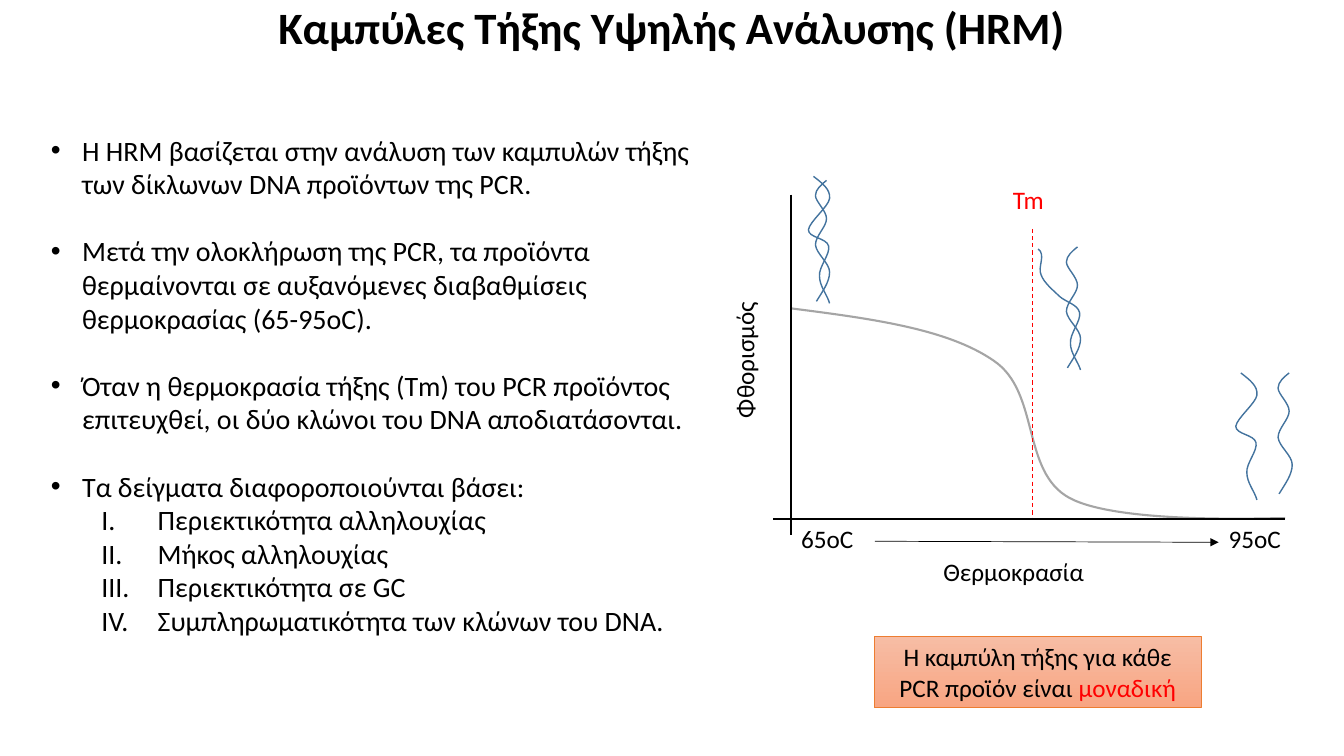
from lxml.etree import SubElement
from pptx import Presentation
from pptx.dml.color import RGBColor
from pptx.enum.shapes import MSO_CONNECTOR as Connector, MSO_SHAPE as Shape
from pptx.enum.text import MSO_ANCHOR as Anchor, MSO_AUTO_SIZE as AutoSize, PP_ALIGN as Align
from pptx.oxml.ns import qn
from pptx.util import Emu, Inches, Pt

COLUMNS, ROWS = 40, 30
BLACK, RED, GREY, BLUE = "000000", "FF0000", "A5A5A5", "43739E"


def colour(value):
    return RGBColor.from_string(value)


class SlideMaker:
    font = "Calibri"

    def __init__(self, deck):
        self.cell_w = deck.slide_width / COLUMNS
        self.cell_h = deck.slide_height / ROWS
        self.slide = deck.slides.add_slide(deck.slide_layouts[5])
        self.shapes = self.slide.shapes

    def place(self, *lengths):
        """Turn alternating columns and rows into lengths."""
        return [Emu(round(length * (self.cell_h if i % 2 else self.cell_w)))
                for i, length in enumerate(lengths)]

    def style(self, paragraph, size, ink=BLACK, bold=False):
        for run in paragraph.runs:
            run.font.name, run.font.size, run.font.bold = self.font, Pt(size), bold
            run.font.color.rgb = colour(ink)

    def title(self, wording, *area):
        heading = self.shapes.title
        heading.left, heading.top, heading.width, heading.height = self.place(*area)
        frame = heading.text_frame
        frame.text = wording
        frame.auto_size, frame.vertical_anchor = AutoSize.NONE, Anchor.MIDDLE
        frame.paragraphs[0].alignment = Align.CENTER
        frame.paragraphs[0].line_spacing = 0.9
        self.style(frame.paragraphs[0], 32, bold=True)

    def label(self, wording, *area, ink=BLACK, rotation=0):
        box = self.shapes.add_textbox(*self.place(*area))
        box.rotation = rotation
        frame = box.text_frame
        frame.text = wording
        frame.word_wrap, frame.auto_size = False, AutoSize.SHAPE_TO_FIT_TEXT
        self.style(frame.paragraphs[0], 18, ink)

    def outline(self, points, reasons, *area):
        frame = self.shapes.add_textbox(*self.place(*area)).text_frame
        frame.word_wrap = True
        frame.text = "\n".join(points + reasons)
        for i, paragraph in enumerate(frame.paragraphs):
            is_point = i < len(points)
            paragraph.level = 0 if is_point else 1
            paragraph.space_before = Pt(24 if is_point and i else 0)
            self.style(paragraph, 20)
            margin, hang = (0.31, 0.31) if is_point else (1.06, 0.56)
            props = paragraph._p.get_or_add_pPr()
            props.set("marL", str(Inches(margin)))
            props.set("indent", str(-Inches(hang)))
            if is_point:
                SubElement(props, qn("a:buFont"), typeface="Arial")
                SubElement(props, qn("a:buChar"), char="•")
            else:
                SubElement(props, qn("a:buAutoNum"), type="romanUcPeriod")

    def curve(self, points, ink, width, left=0, top=0):
        """Draw a start point followed by three points for each cubic curve."""
        track = [self.place(left + x, top + y) for x, y in points]
        builder = self.shapes.build_freeform(*track[0], scale=1.0)
        builder.add_line_segments(track[1:], close=False)
        drawn = builder.convert_to_shape()
        trace = drawn._element.find(".//" + qn("a:path"))
        segments = trace.findall(qn("a:lnTo"))
        for first in range(0, len(segments), 3):
            cubic = SubElement(trace, qn("a:cubicBezTo"))
            for segment in segments[first:first + 3]:
                cubic.append(segment[0])
                trace.remove(segment)
        drawn.shadow.inherit = False
        drawn.fill.background()
        drawn.line.color.rgb, drawn.line.width = colour(ink), Pt(width)

    def line(self, *ends, ink=BLACK, width=1.5, dashed=False, arrow=False):
        rule = self.shapes.add_connector(Connector.STRAIGHT, *self.place(*ends))
        rule.line.fill.solid()
        rule.line.fill.fore_color.rgb = colour(ink)
        rule.line.width = Pt(width)
        stroke = rule._element.spPr.find(qn("a:ln"))
        if dashed:
            SubElement(stroke, qn("a:prstDash"), val="dash")
        if arrow:
            SubElement(stroke, qn("a:tailEnd"), type="triangle")
        SubElement(rule._element.spPr, qn("a:effectLst"))

    def callout(self, wording, emphasis, *area):
        box = self.shapes.add_shape(Shape.RECTANGLE, *self.place(*area))
        box.shadow.inherit = False
        box.fill.gradient()
        box.fill.gradient_angle = 270
        for stop, shade in zip(box.fill.gradient_stops, ("F7BDA5", "F8A582")):
            stop.color.rgb = colour(shade)
        box.line.color.rgb, box.line.width = colour("ED7D31"), Pt(0.5)
        frame = box.text_frame
        frame.word_wrap, frame.vertical_anchor = True, Anchor.MIDDLE
        message = frame.paragraphs[0]
        message.text = wording
        message.alignment = Align.CENTER
        message.add_run().text = emphasis
        self.style(message, 18)
        message.runs[-1].font.color.rgb = colour(RED)


# Curves, in columns and rows
MELTING_CURVE = [(23.55, 12.24), (25.89, 12.64), (28.2, 13.04), (29.58, 14.32),
                 (30.96, 15.56), (30.39, 18.72), (31.83, 19.76),
                 (33.27, 20.8), (37.71, 20.56), (38.25, 20.56)]
RIGHT_STRAND = [(.33, 0), (.18, .16), (0, .36), (0, .6), (0, .84), (.33, 1.2),
                (.33, 1.52), (.33, 1.84), (0, 2.2), (0, 2.56), (.03, 2.92),
                (.42, 3.28), (.42, 3.64), (.42, 4.04), (.21, 4.4), (.03, 4.8)]
LEFT_STRAND = [(.15, 0), (.42, .28), (.66, .52), (.63, .88), (.6, 1.2), (.03, 1.8),
               (0, 2.12), (0, 2.44), (.54, 2.44), (.6, 2.76), (.66, 3.08),
               (.3, 3.6), (.33, 3.96), (.33, 4.36), (.57, 4.72), (.63, 5.04)]
OPENING_STRAND = [(0, 0), (.24, .24), (-.03, .72), (.09, 1.04), (.18, 1.36), (.45, 1.64),
                  (.63, 1.88), (.84, 2.12), (1.17, 2.2), (1.23, 2.52), (1.29, 2.84),
                  (.93, 3.36), (.96, 3.76), (.96, 4.12), (1.2, 4.52), (1.26, 4.8)]
STRANDS = [(RIGHT_STRAND, 24.27, 7.16), (LEFT_STRAND, 24.06, 7),
           (RIGHT_STRAND, 31.74, 9.8), (OPENING_STRAND, 30.9, 9.88),
           (RIGHT_STRAND, 38.04, 14.8), (LEFT_STRAND, 36.78, 14.8)]

POINTS = [
    "Η HRM βασίζεται στην ανάλυση των καμπυλών τήξης των δίκλωνων DNA προϊόντων της PCR.",
    "Μετά την ολοκλήρωση της PCR, τα προϊόντα θερμαίνονται σε αυξανόμενες "
    "διαβαθμίσεις θερμοκρασίας (65-95oC).",
    "Όταν η θερμοκρασία τήξης (Τm) του PCR προϊόντος επιτευχθεί, οι δύο κλώνοι "
    "του DNA αποδιατάσονται.",
    "Τα δείγματα διαφοροποιούνται βάσει:",
]
REASONS = ["Περιεκτικότητα αλληλουχίας", "Μήκος αλληλουχίας", "Περιεκτικότητα σε GC",
           "Συμπληρωματικότητα των κλώνων του DNA."]


def main():
    deck = Presentation()
    deck.slide_width, deck.slide_height = Inches(40 / 3), Inches(7.5)
    page = SlideMaker(deck)
    page.title("Καμπύλες Τήξης Υψηλής Ανάλυσης (HRM)", 0, 0, COLUMNS, 2.36)

    # Melting curve and DNA strands
    page.curve(MELTING_CURVE, GREY, 1.5)
    for strand, left, top in STRANDS:
        page.curve(strand, BLUE, 1, left, top)

    # Temperature range and axis names
    page.label("65oC", 23.55, 20.56, 2.19, 1.6)
    page.label("95oC", 36.27, 20.56, 2.49, 1.84)
    page.line(26.04, 21.48, 36.27, 21.52, width=0.5, arrow=True)
    page.label("Θερμοκρασία", 27.78, 21.88, 5.55, 1.84)
    page.label("Φθορισμός", 19.89, 12.92, 4.71, 1.84, rotation=270)

    # Melting point and axes
    page.line(30.74, 9.08, 30.74, 20.64, ink=RED, width=0.75, dashed=True)
    page.label("Tm", 29.85, 7.12, 1.77, 1.84, ink=RED)
    page.line(23.55, 7.72, 23.55, 21.24)
    page.line(23.01, 20.6, 38.25, 20.6)

    # Explanation and conclusion
    page.outline(POINTS, REASONS, 1.22, 5.08, 19.8, 20.6)
    page.callout("Η καμπύλη τήξης για κάθε PCR προϊόν είναι ", "μοναδική",
                 26.01, 25.24, 9.75, 2.84)
    deck.save("out.pptx")


if __name__ == "__main__":
    main()
